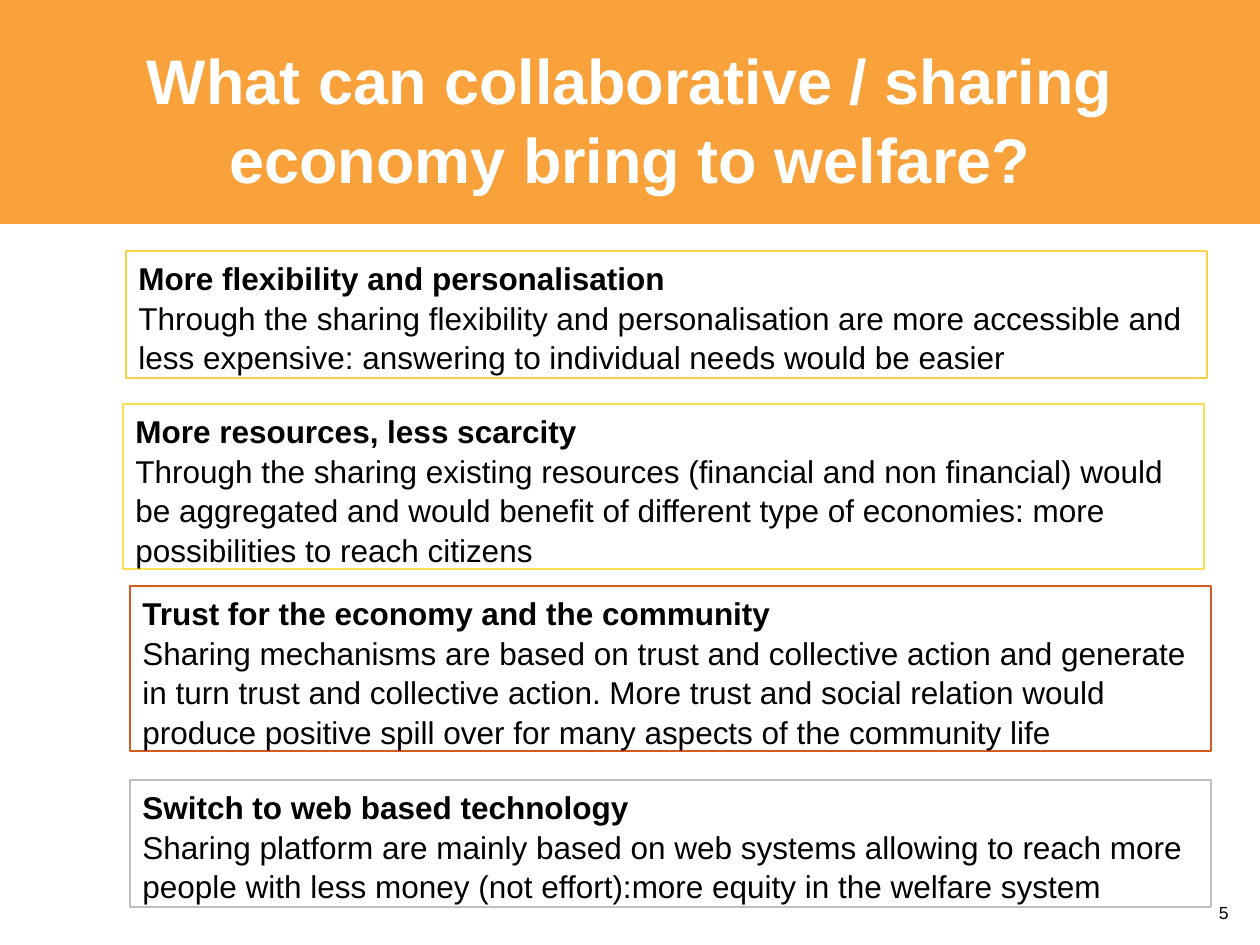
"""Build the slide on what the sharing economy can bring to welfare."""
from dataclasses import dataclass

from pptx import Presentation
from pptx import util as u
from pptx.dml.color import RGBColor
from pptx.enum import shapes, text

PX = u.Inches(1) / 126
LEFT, CENTER, RIGHT = text.PP_ALIGN.LEFT, text.PP_ALIGN.CENTER, text.PP_ALIGN.RIGHT
BOX_WIDTH = 1081


@dataclass(frozen=True)
class Benefit:
    """A bordered box with a heading and an explanation."""

    x: int
    y: int
    h: int
    line: str
    heading: str
    body: str


BENEFITS = [
    Benefit(126, 251, 127, "FAD24A", "More flexibility and personalisation",
            "Through the sharing flexibility and personalisation are more accessible and "
            "less expensive: answering to individual needs would be easier"),
    Benefit(123, 404, 165, "FBDF53", "More resources, less scarcity",
            "Through the sharing existing resources (financial and non financial) would "
            "be aggregated and would benefit of different type of economies: more "
            "possibilities to reach citizens"),
    Benefit(130, 586, 165, "D35B1F", "Trust for the economy and the community",
            "Sharing mechanisms are based on trust and collective action and generate "
            "in turn trust and collective action. More trust and social relation would "
            "produce positive spill over for many aspects of the community life"),
    Benefit(130, 780, 127, "BFBFBF", "Switch to web based technology",
            "Sharing platform are mainly based on web systems allowing to reach more "
            "people with less money (not effort):more equity in the welfare system"),
]


def px(*lengths: int) -> list[u.Emu]:
    """Turn px lengths into EMU."""
    return [u.Emu(round(n * PX)) for n in lengths]


def rgb(value: str) -> RGBColor:
    """Turn a hex string into a colour."""
    return RGBColor.from_string(value)


def apply(target, formats: dict) -> None:
    """Set each attribute named in the formats."""
    for name, value in formats.items():
        setattr(target, name, value)


def write(p, words: str, size: int, bold: bool = False, color: str = "000000",
          align=LEFT, spacing: float = 1.05) -> None:
    """Put formatted words into a paragraph."""
    apply(p, {"alignment": align, "line_spacing": spacing})
    r = p.add_run()
    r.text = words
    apply(r.font, {"name": "Arial", "size": u.Pt(size), "bold": bold})
    r.font.color.rgb = rgb(color)


def add_rect(slide, x: int, y: int, w: int, h: int):
    """Add a rectangle without a shadow."""
    sp = slide.shapes.add_shape(shapes.MSO_SHAPE.RECTANGLE, *px(x, y, w, h))
    sp.shadow.inherit = False
    return sp


def add_title(slide, words: str) -> None:
    """Place the title over its orange banner."""
    sp = slide.shapes.title
    apply(sp, dict(zip(("left", "top", "width", "height"), px(63, 38, 1134, 158))))
    apply(sp.text_frame, {"word_wrap": True, "auto_size": text.MSO_AUTO_SIZE.NONE,
                          "vertical_anchor": text.MSO_ANCHOR.MIDDLE})
    write(sp.text_frame.paragraphs[0], words, 36, True, "FFFFFF", CENTER)
    banner = add_rect(slide, 0, 0, 1260, 224)
    banner.fill.solid()
    banner.fill.fore_color.rgb = rgb("F9A13A")
    banner.line.fill.background()
    sp.element.addprevious(banner.element)


def add_benefit(slide, benefit: Benefit) -> None:
    """Draw one benefit box."""
    sp = add_rect(slide, benefit.x, benefit.y, BOX_WIDTH, benefit.h)
    sp.fill.background()
    sp.line.color.rgb = rgb(benefit.line)
    sp.line.width = u.Pt(0.75)
    tf = sp.text_frame
    apply(tf, {"word_wrap": True, "vertical_anchor": text.MSO_ANCHOR.TOP,
               "auto_size": text.MSO_AUTO_SIZE.SHAPE_TO_FIT_TEXT})
    write(tf.paragraphs[0], benefit.heading, 18, bold=True)
    write(tf.add_paragraph(), benefit.body, 18)


def add_page_number(slide, number: str) -> None:
    """Write the page number in the bottom right corner."""
    tf = slide.shapes.add_textbox(*px(1172, 896, 69, 49)).text_frame
    tf.word_wrap = True
    write(tf.paragraphs[0], number, 10, align=RIGHT, spacing=1.0)


def main() -> None:
    """Build and save the slide."""
    prs = Presentation()
    prs.slide_width, prs.slide_height = px(1260, 945)
    slide = prs.slides.add_slide(prs.slide_layouts[5])
    add_title(slide, "What can collaborative / sharing economy bring to welfare?")
    add_page_number(slide, "5")
    for benefit in BENEFITS:
        add_benefit(slide, benefit)
    prs.save("out.pptx")


if __name__ == "__main__":
    main()
